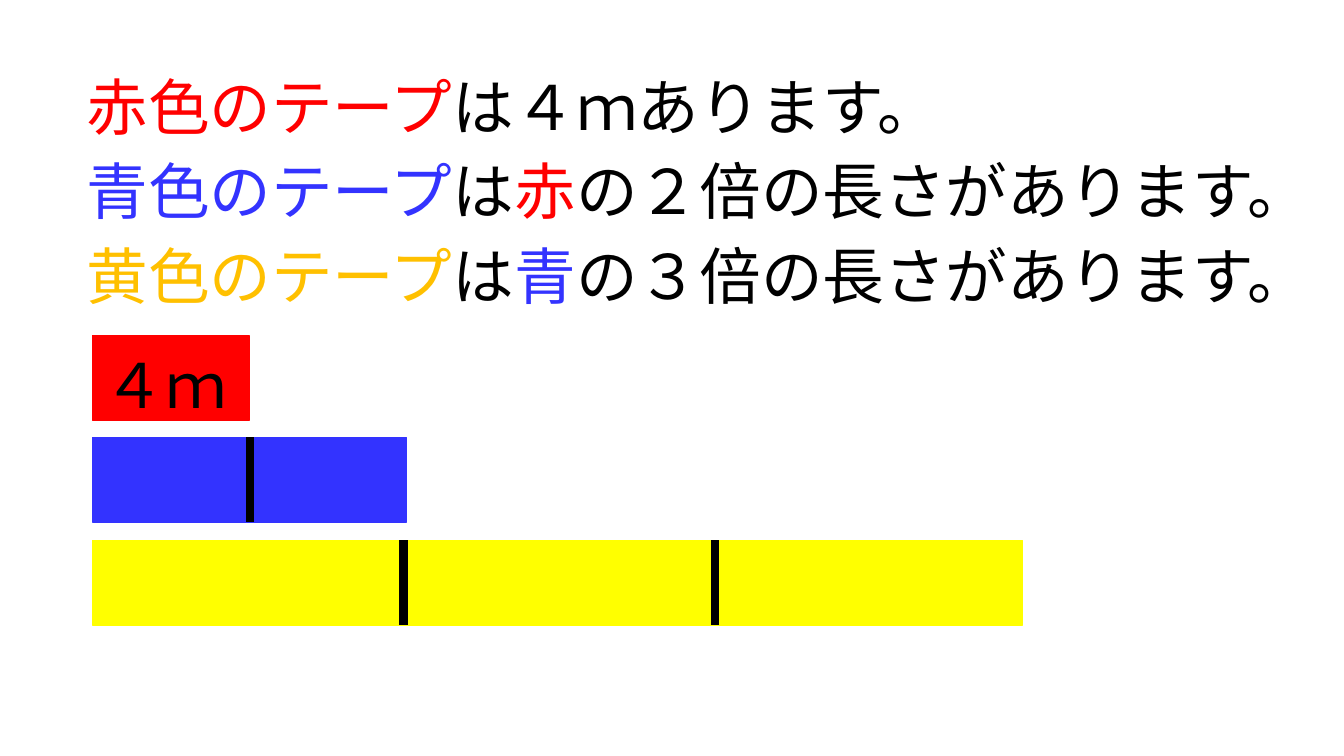
from dataclasses import dataclass

from lxml.etree import SubElement
from pptx import Presentation
from pptx.dml.color import RGBColor
from pptx.enum.shapes import MSO_CONNECTOR, MSO_SHAPE
from pptx.enum.text import MSO_AUTO_SIZE
from pptx.oxml.ns import qn
from pptx.slide import Slide
from pptx.util import Inches, Pt

FONT = "Noto Sans CJK JP"
RED = RGBColor(0xFF, 0x00, 0x00)
BLUE = RGBColor(0x33, 0x33, 0xFF)
GOLD = RGBColor(0xFF, 0xC0, 0x00)
YELLOW = RGBColor(0xFF, 0xFF, 0x00)
BLACK = RGBColor(0x00, 0x00, 0x00)

ROW_HEIGHT = 0.84
TAPE_LEFT = 0.92


@dataclass(frozen=True)
class Phrase:
    text: str
    color: RGBColor = BLACK


@dataclass(frozen=True)
class Sentence:
    left: float
    top: float
    width: float
    phrases: tuple[Phrase, ...]


@dataclass(frozen=True)
class Tape:
    top: float
    length: float
    color: RGBColor
    cuts: tuple[float, ...] = ()


SENTENCES = (
    Sentence(0.76, 0.63, 8.47, (
        Phrase("赤色のテープ", RED), Phrase("は４ｍあります。"))),
    Sentence(0.76, 1.47, 12.17, (
        Phrase("青色のテープ", BLUE), Phrase("は"),
        Phrase("赤", RED), Phrase("の２倍の長さがあります。"))),
    Sentence(0.76, 2.31, 12.29, (
        Phrase("黄色のテープ", GOLD), Phrase("は"),
        Phrase("青", BLUE), Phrase("の３倍の長さがあります。"))),
)
RED_LENGTH = Sentence(0.93, 3.39, 1.55, (Phrase("４ｍ"),))

TAPES = (
    Tape(3.33, 1.55, RED),
    Tape(4.34, 3.11, BLUE, (2.48,)),
    Tape(5.36, 9.22, YELLOW, (4.0, 7.09)),
)


def write_sentence(slide: Slide, sentence: Sentence) -> None:
    box = slide.shapes.add_textbox(
        Inches(sentence.left), Inches(sentence.top),
        Inches(sentence.width), Inches(ROW_HEIGHT))
    frame = box.text_frame
    frame.word_wrap = True
    frame.auto_size = MSO_AUTO_SIZE.SHAPE_TO_FIT_TEXT
    for phrase in sentence.phrases:
        run = frame.paragraphs[0].add_run()
        run.text = phrase.text
        run.font.size = Pt(44)
        run.font.color.rgb = phrase.color
        run.font.name = FONT
        # Japanese glyphs take the East Asian typeface
        SubElement(run.font._element, qn("a:ea"), typeface=FONT)


def draw_tape(slide: Slide, tape: Tape) -> None:
    strip = slide.shapes.add_shape(
        MSO_SHAPE.RECTANGLE, Inches(TAPE_LEFT), Inches(tape.top),
        Inches(tape.length), Inches(ROW_HEIGHT))
    strip.shadow.inherit = False
    strip.fill.solid()
    strip.fill.fore_color.rgb = tape.color
    strip.line.color.rgb = tape.color
    strip.line.width = Pt(1)


def draw_cuts(slide: Slide, tape: Tape) -> None:
    for x in tape.cuts:
        cut = slide.shapes.add_connector(
            MSO_CONNECTOR.STRAIGHT, Inches(x), Inches(tape.top),
            Inches(x), Inches(tape.top + ROW_HEIGHT))
        cut.line.color.rgb = BLACK
        cut.line.width = Pt(6)
        SubElement(cut._element.spPr, qn("a:effectLst"))


def main() -> None:
    prs = Presentation()
    prs.slide_width, prs.slide_height = Inches(13.33), Inches(7.5)
    slide = prs.slides.add_slide(prs.slide_layouts[6])

    # Word problem
    for sentence in SENTENCES:
        write_sentence(slide, sentence)

    # Tape diagram
    for tape in TAPES:
        draw_tape(slide, tape)
    write_sentence(slide, RED_LENGTH)
    for tape in TAPES:
        draw_cuts(slide, tape)

    prs.save("out.pptx")


if __name__ == "__main__":
    main()
